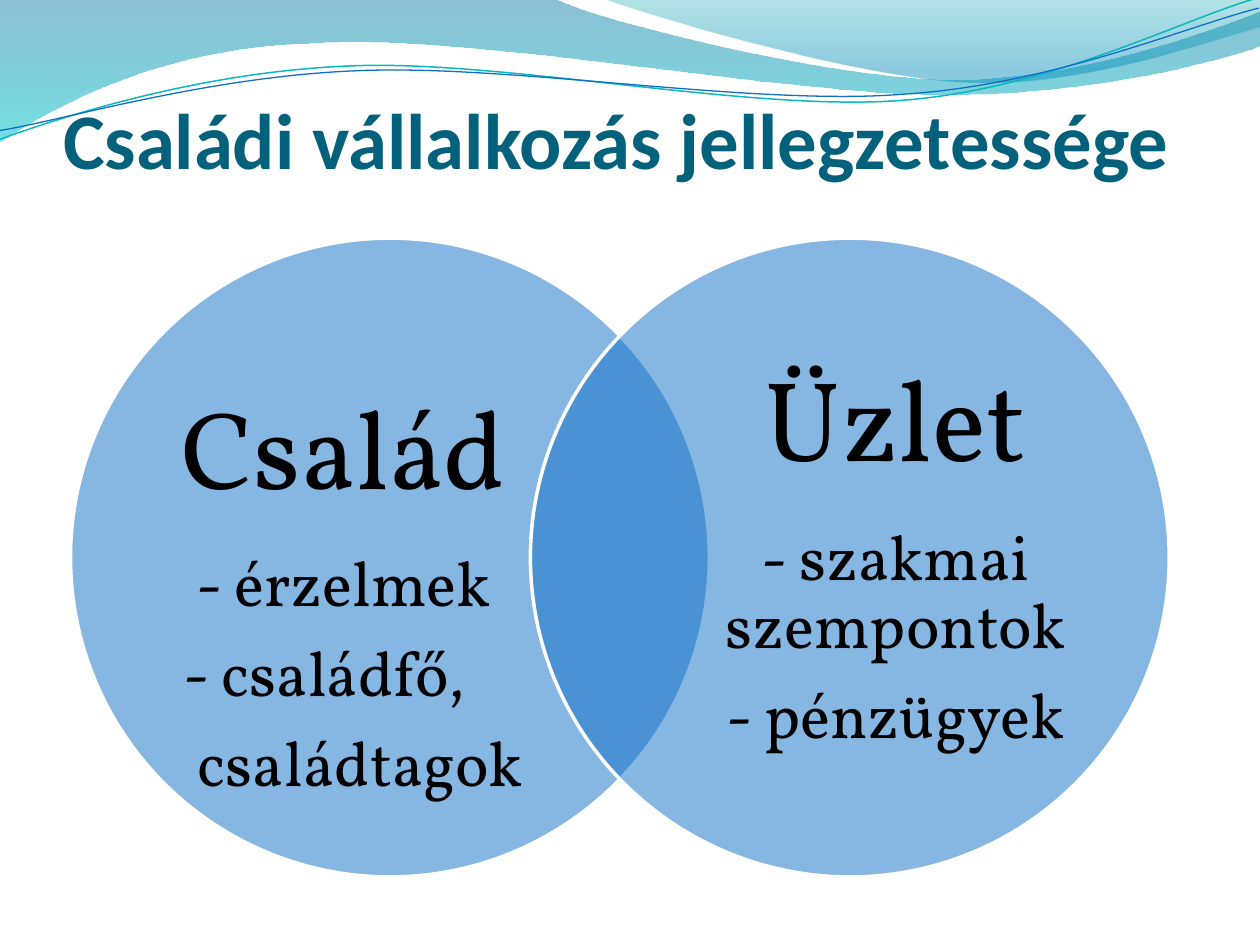
"""Builds a slide with a two-circle Venn diagram under a wave header."""
from dataclasses import dataclass

from pptx import Presentation
from pptx import util as u
from pptx.dml.color import RGBColor
from pptx.enum import shapes, text
from pptx.oxml import parse_xml
from pptx.oxml.ns import nsdecls, qn

WAVES = [
    dict(start=(0, 0),
         steps=[(4.4, -0.01), (4.76, 0.17, 6.64, 0.63, 7.58, 0.63),
                (8.53, 0.63, 9.58, 0.26, 10, 0.09), (10.01, 0.36),
                (9.83, 0.44, 8.7, 0.76, 7.46, 0.75),
                (6.22, 0.75, 3.82, 0.28, 2.57, 0.34),
                (1.29, 0.36, 0.46, 0.83, -0.01, 1.13), (0, 0)],
         stops=[(0, "0074A1", 45), (1, "00C6CF", 55)]),
    dict(start=(4.79, -0.01),
         steps=[(5.09, 0.11, 6.82, 0.62, 7.69, 0.65),
                (8.56, 0.69, 9.61, 0.32, 10, 0.21), (10, 0), (4.79, -0.01)],
         stops=[(0, "00A1A9", 30), (0.8, "008BBF", 45)]),
    dict(start=(-0.02, 0.87),
         steps=[(0.47, 0.72, 1.58, 0.41, 2.78, 0.42),
                (3.96, 0.42, 5.91, 0.93, 7.12, 0.9),
                (8.32, 0.87, 9.4, 0.36, 10, 0.22)],
         line=("0AB8BF", 0.85)),
    dict(start=(-0.02, 0.8),
         steps=[(0.46, 0.75, 1.64, 0.45, 2.83, 0.46),
                (4.04, 0.46, 5.96, 0.89, 7.16, 0.85),
                (8.35, 0.83, 9.42, 0.42, 10.01, 0.3)],
         line=("0F6FC6", 0.75)),
]


@dataclass(frozen=True)
class Theme:
    """Colours, fonts and type sizes of the slide."""
    title: str = "04617B"
    ink: str = "000000"
    disc: str = "0F6FC6"
    rim: str = "FFFFFF"
    head: str = "Calibri"
    body: str = "Vollkorn"
    head_size: int = 45
    item_size: int = 36


class Page:
    """Holds the theme and the slide being drawn."""

    def __init__(self, deck, theme):
        """Add a title-only slide."""
        self.theme = theme
        self.slide = deck.slides.add_slide(deck.slide_layouts[5])

    def fade(self, fill, alphas):
        """Set the opacity percentages of a fill's colours in order."""
        for color, alpha in zip(fill.iter(qn("a:srgbClr")), alphas):
            color.append(parse_xml(
                f'<a:alpha {nsdecls("a")} val="{alpha * 1000}"/>'))

    def outline(self, start, steps, close):
        """Draw an outline of straight (x, y) and cubic six-number steps."""
        form = self.slide.shapes.build_freeform(
            *map(u.Inches, start), scale=1.0)
        pairs = [(u.Inches(step[i]), u.Inches(step[i + 1]))
                 for step in steps for i in range(0, len(step), 2)]
        form.add_line_segments(pairs, close=close)
        shape = form.convert_to_shape()
        legs = iter(list(shape._element.iter(qn("a:lnTo"))))
        for step in steps:
            leg = next(legs)
            if len(step) == 6:
                curve = parse_xml(f'<a:cubicBezTo {nsdecls("a")}/>')
                leg.addprevious(curve)
                for part in (leg, next(legs), next(legs)):
                    curve.append(part[0])
                    part.getparent().remove(part)
        shape.shadow.inherit = False
        return shape

    def wave(self, start, steps, stops=None, line=None):
        """Draw a gradient wave or a thin curved line."""
        wave = self.outline(start, steps, bool(stops))
        if line:
            wave.rotation = 357.3
            wave.fill.background()
            wave.line.color.rgb = RGBColor.from_string(line[0])
            wave.line.width = u.Pt(line[1])
            return
        wave.line.fill.background()
        wave.fill.gradient()
        wave.fill.gradient_angle = 270
        for stop, (place, color, _) in zip(wave.fill.gradient_stops, stops):
            stop.position = place
            stop.color.rgb = RGBColor.from_string(color)
        self.fade(wave._element.spPr.find(qn("a:gradFill")),
                  [alpha for _, _, alpha in stops])

    def style(self, para, font, size, color, bold=False):
        """Format the runs of a paragraph."""
        for run in para.runs:
            run.font.name = font
            run.font.size = u.Pt(size)
            run.font.bold = bold
            run.font.color.rgb = RGBColor.from_string(color)

    def title(self, words):
        """Place and format the title."""
        title = self.slide.shapes.title
        title.left, title.top = u.Inches(0.5), u.Inches(0.77)
        title.width, title.height = u.Inches(9), u.Inches(0.7)
        frame = title.text_frame
        frame.text = words
        frame.auto_size = text.MSO_AUTO_SIZE.NONE
        frame.vertical_anchor = text.MSO_ANCHOR.BOTTOM
        frame.margin_left = frame.margin_right = frame.margin_bottom = 0
        para = frame.paragraphs[0]
        para.alignment = text.PP_ALIGN.LEFT
        self.style(para, self.theme.head, self.theme.head_size,
                   self.theme.title, True)
        self.slide.shapes._spTree.append(title._element)

    def disc(self, left):
        """Draw a half-transparent circle."""
        side = u.Inches(5.07)
        disc = self.slide.shapes.add_shape(
            shapes.MSO_SHAPE.OVAL, u.Inches(left), u.Inches(1.89), side, side)
        disc.shadow.inherit = False
        disc.fill.solid()
        disc.fill.fore_color.rgb = RGBColor.from_string(self.theme.disc)
        self.fade(disc._element.spPr.find(qn("a:solidFill")), [50])
        disc.line.color.rgb = RGBColor.from_string(self.theme.rim)
        disc.line.width = u.Pt(2)

    def label(self, left, size, lines, anchor=text.MSO_ANCHOR.MIDDLE, inset=0):
        """Write a heading and its items, given as (words, indent)."""
        box = self.slide.shapes.add_textbox(
            u.Inches(left), u.Inches(2.49), u.Inches(2.92), u.Inches(3.87))
        frame = box.text_frame
        frame.text = "\n".join(words for words, _ in lines)
        frame.word_wrap = True
        frame.vertical_anchor = anchor
        frame.margin_left = frame.margin_right = frame.margin_bottom = 0
        frame.margin_top = u.Inches(inset)
        for i, (para, (_, indent)) in enumerate(zip(frame.paragraphs, lines)):
            points = self.theme.item_size if i else size
            para.line_spacing = 0.9
            para.space_after = u.Pt(round(points * 0.35, 1))
            para.alignment = text.PP_ALIGN.CENTER
            if indent:
                para.alignment = text.PP_ALIGN.LEFT
                para._p.get_or_add_pPr().set("marL", str(u.Inches(indent)))
            self.style(para, self.theme.body, points, self.theme.ink)


def main():
    """Build and save the slide."""
    deck = Presentation()
    deck.slide_width, deck.slide_height = u.Inches(10), u.Inches(7.5)
    page = Page(deck, Theme())
    for wave in WAVES:
        page.wave(**wave)
    page.title("Családi vállalkozás jellegzetessége")
    page.disc(0.56)
    page.label(1.27, 63,
               [("Család", 0), ("- érzelmek", 0), ("- családfő,", 0.19),
                ("családtagok", 0.3)], text.MSO_ANCHOR.TOP, 0.64)
    page.disc(4.21)
    page.label(5.65, 65,
               [("Üzlet", 0), ("- szakmai szempontok", 0),
                ("- pénzügyek", 0)])
    deck.save("out.pptx")


if __name__ == "__main__":
    main()
